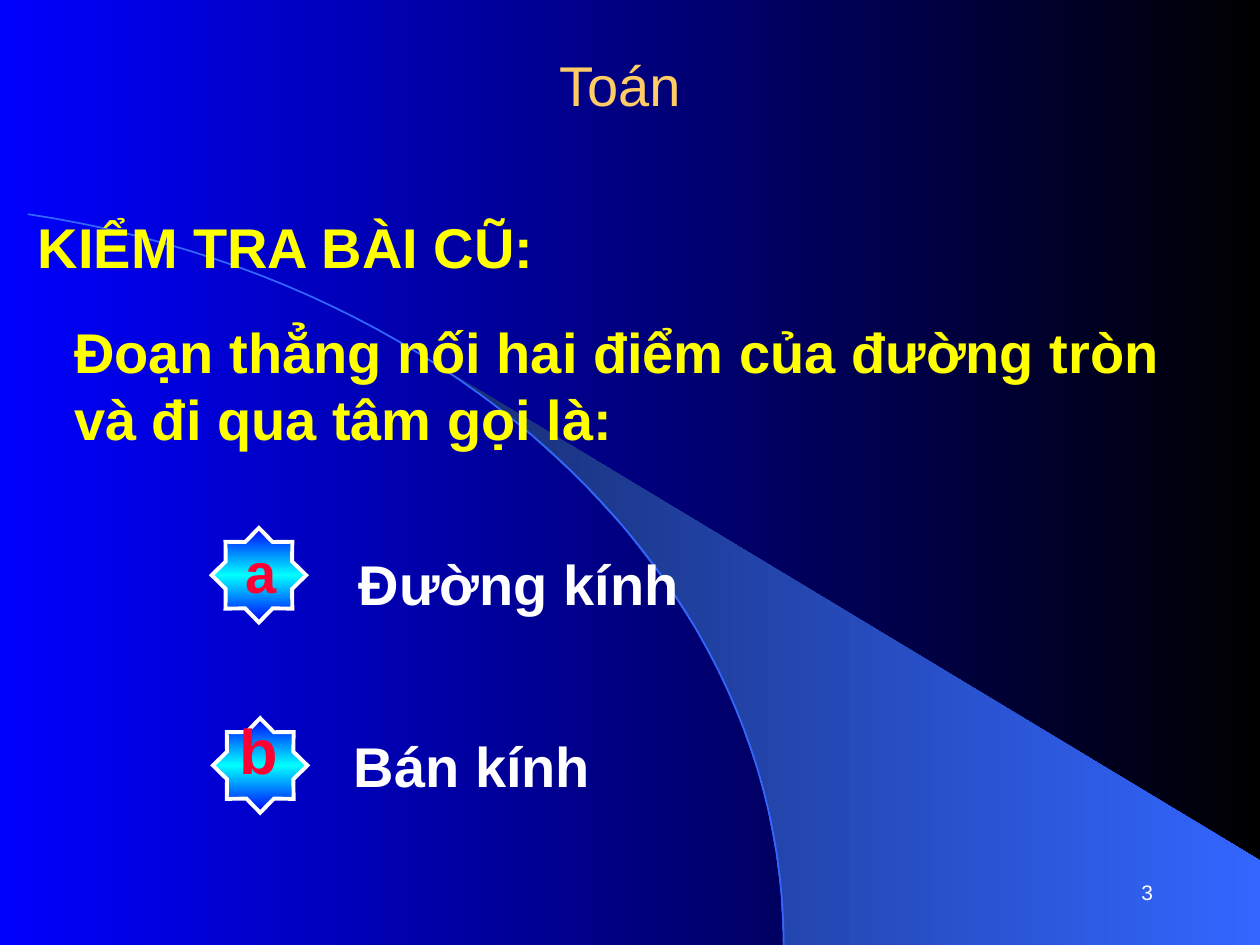
import copy

import lxml.etree
import pptx
import pptx.dml.color
import pptx.enum.shapes
import pptx.enum.text
import pptx.oxml.ns
import pptx.util

Inches = pptx.util.Inches
Pt = pptx.util.Pt
RGBColor = pptx.dml.color.RGBColor
ALIGN = pptx.enum.text.PP_ALIGN
ANCHOR = pptx.enum.text.MSO_ANCHOR

BLUE = RGBColor(0x00, 0x00, 0xFF)
BLACK = RGBColor(0x00, 0x00, 0x00)
CYAN = RGBColor(0x00, 0xFF, 0xFF)
BEAM_DARK = RGBColor(0x18, 0x2F, 0x76)
BEAM_LIGHT = RGBColor(0x33, 0x66, 0xFF)
WHITE = RGBColor(0xFF, 0xFF, 0xFF)
YELLOW = RGBColor(0xFF, 0xFF, 0x00)
GOLD = RGBColor(0xFF, 0xCC, 0x66)
RED = RGBColor(0xFF, 0x00, 0x33)

BEAM = [
    (6.22, 7.5), (10, 7.5), (10, 6.83), (3.58, 2.96), (3.86, 3.17), (4.09, 3.34),
    (4.34, 3.57), (4.59, 3.8), (4.96, 4.2), (5.28, 4.62), (5.52, 4.99), (5.73, 5.37),
    (5.89, 5.76), (6.01, 6.1), (6.09, 6.4), (6.16, 6.77), (6.2, 7.09),
]
ARC_CONTROLS = [(0.22, 1.7), (3.7, 2.22), (6.22, 4.66), (6.22, 7.5)]
ARC_STEPS = 48

PAGE_NUMBER = ("3", (7.17, 6.83, 2.08, 0.5))
TITLE = ("Toán", (0.75, 0.33, 8.5, 1.25))
HEADING = ("KIỂM TRA BÀI CŨ:", (0.07, 1.64, 4.4, 0.5))
QUESTION = (
    "Đoạn thẳng nối hai điểm của đường tròn\nvà đi qua tâm gọi là:",
    (0.49, 2.59, 9.2, 0.92),
)
STAR_SIZE = 0.75
# answer, its place, letter, letter place, letter size, star corner
ANSWERS = [
    ("Bán kính", (2.71, 5.91, 3, 0.33), "b", (1.8, 5.6, 0.51, 0.71), 36, (1.69, 5.7)),
    ("Đường kính", (2.75, 4.46, 3, 0.33), "a", (1.85, 4.22, 0.45, 0.64), 32, (1.68, 4.19)),
]


def set_gradient(fill, colors, angle=0):
    """Spread the colours evenly along a linear gradient."""
    fill.gradient()
    fill.gradient_angle = angle
    stop_list = fill._fill._gradFill.gsLst
    while len(stop_list) < len(colors):
        stop_list.append(copy.deepcopy(stop_list[-1]))
    for index, (stop, color) in enumerate(zip(fill.gradient_stops, colors)):
        stop.color.rgb = color
        stop.position = index / (len(colors) - 1)


def add_outline(page, points, close):
    corners = [(Inches(x), Inches(y)) for x, y in points]
    builder = page.shapes.build_freeform(*corners[0])
    builder.add_line_segments(corners[1:], close=close)
    shape = builder.convert_to_shape()
    shape.shadow.inherit = False
    return shape


def bezier_points(controls, steps):
    points = []
    for step in range(steps + 1):
        t = step / steps
        weights = ((1 - t) ** 3, 3 * t * (1 - t) ** 2, 3 * t * t * (1 - t), t ** 3)
        points.append(tuple(sum(w * c[axis] for w, c in zip(weights, controls))
                            for axis in (0, 1)))
    return points


def add_text(page, text, place, color, size=32, bold=True, align=ALIGN.LEFT,
             anchor=ANCHOR.TOP):
    box = page.shapes.add_textbox(*map(Inches, place))
    frame = box.text_frame
    frame.word_wrap = True
    frame.vertical_anchor = anchor
    frame.text = text
    for para in frame.paragraphs:
        para.alignment = align
        for span in para.runs:
            span.font.name = "Arial"
            span.font.size = Pt(size)
            span.font.bold = bold
            span.font.color.rgb = color
    return box


def add_star(page, corner):
    star = page.shapes.add_shape(
        pptx.enum.shapes.MSO_SHAPE.STAR_8_POINT,
        *map(Inches, (*corner, STAR_SIZE, STAR_SIZE)))
    star.adjustments[0] = 0.38
    star.shadow.inherit = False
    set_gradient(star.fill, [BLUE, CYAN, BLUE], 90)
    star.line.color.rgb = WHITE
    star.line.width = Pt(2.25)
    outline = star.line._get_or_add_ln()
    lxml.etree.SubElement(outline, pptx.oxml.ns.qn("a:miter"), lim="800000")


def main():
    deck = pptx.Presentation()
    deck.slide_width, deck.slide_height = Inches(10), Inches(7.5)
    page = deck.slides.add_slide(deck.slide_layouts[6])
    set_gradient(page.background.fill, [BLUE, BLACK])

    beam = add_outline(page, BEAM, close=True)
    set_gradient(beam.fill, [BEAM_DARK, BEAM_LIGHT])
    beam.line.fill.background()
    arc = add_outline(page, bezier_points(ARC_CONTROLS, ARC_STEPS), close=False)
    arc.fill.background()
    arc.line.color.rgb = BEAM_LIGHT
    arc.line.width = Pt(1)

    add_text(page, *PAGE_NUMBER, WHITE, size=12, bold=False, align=ALIGN.RIGHT,
             anchor=ANCHOR.MIDDLE)
    title = add_text(page, *TITLE, GOLD, bold=False, align=ALIGN.CENTER)
    title.text_frame.margin_top = Inches(0.07)
    title.text_frame.margin_right = Inches(0.26)
    add_text(page, *QUESTION, YELLOW, anchor=ANCHOR.MIDDLE)
    add_text(page, *HEADING, YELLOW, align=ALIGN.CENTER)
    for answer, place, letter, letter_place, letter_size, corner in ANSWERS:
        add_text(page, answer, place, WHITE, anchor=ANCHOR.MIDDLE)
        add_star(page, corner)
        add_text(page, letter, letter_place, RED, size=letter_size)

    deck.save("out.pptx")


if __name__ == "__main__":
    main()
